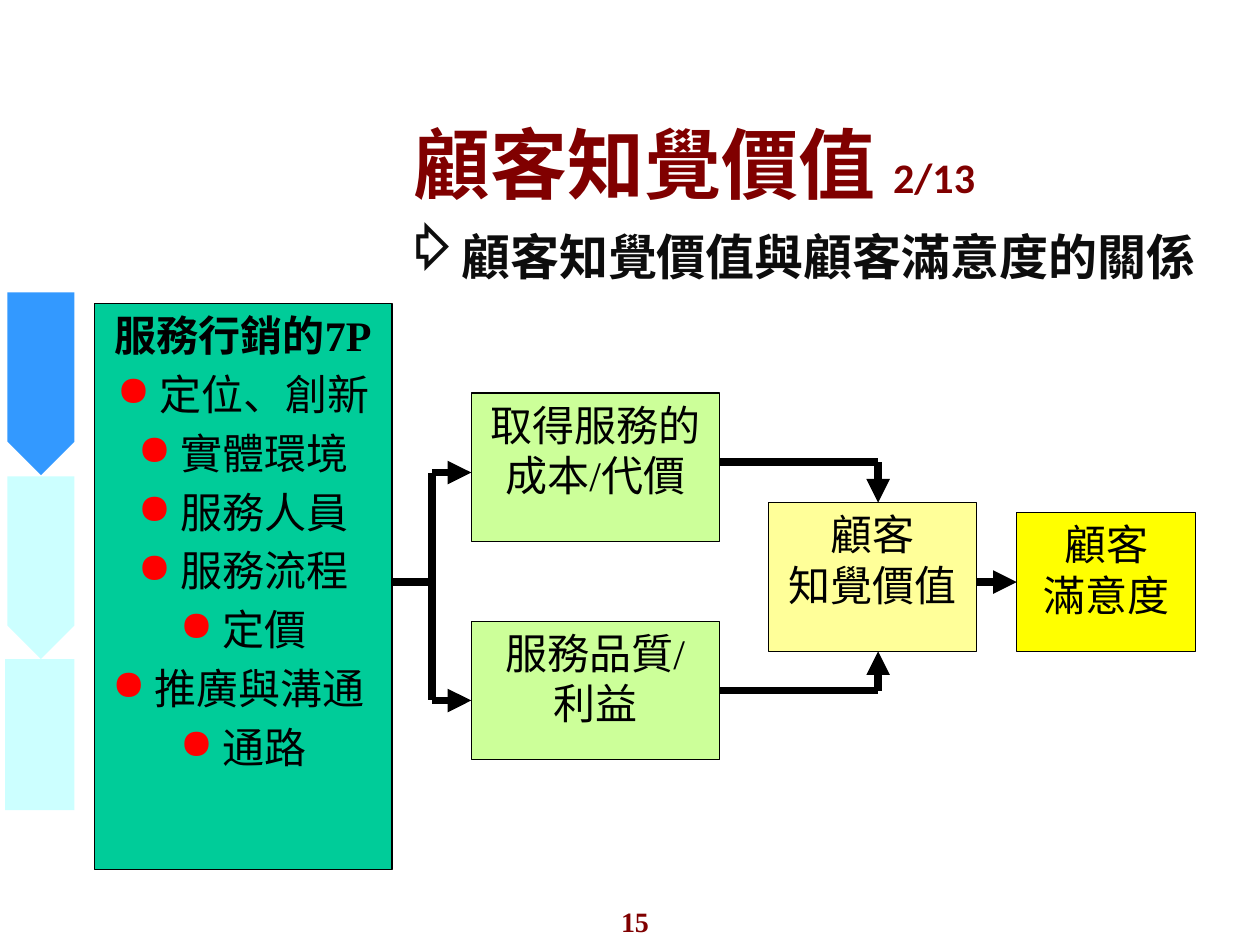
from lxml import etree
from pptx import Presentation
from pptx.dml.color import RGBColor
from pptx.enum.shapes import MSO_CONNECTOR, MSO_SHAPE
from pptx.enum.text import MSO_ANCHOR, PP_ALIGN
from pptx.oxml.ns import qn
from pptx.util import Pt

STRAIGHT = MSO_CONNECTOR.STRAIGHT
RECTANGLE, PENTAGON = MSO_SHAPE.RECTANGLE, MSO_SHAPE.PENTAGON
LEFT, CENTER = PP_ALIGN.LEFT, PP_ALIGN.CENTER
TOP, MIDDLE = MSO_ANCHOR.TOP, MSO_ANCHOR.MIDDLE
LEFT_SIDE, RIGHT_SIDE = 1, 3

BLACK = RGBColor(0, 0, 0)
INK = RGBColor(0x0D, 0x0D, 0x0D)
MAROON = RGBColor(0x80, 0, 0)
RED = RGBColor(0xFF, 0, 0)
GREEN = RGBColor(0, 0xCC, 0x99)
LIME = RGBColor(0xCC, 0xFF, 0x99)
CREAM = RGBColor(0xFF, 0xFF, 0x99)
YELLOW = RGBColor(0xFF, 0xFF, 0)
BLUE = RGBColor(0x33, 0x99, 0xFF)
PALE = RGBColor(0xCC, 0xFF, 0xFF)

SERIF = {"name": "Times New Roman", "size": Pt(24), "bold": False, "color": BLACK}
SERIF_BOLD = {**SERIF, "bold": True}
TITLE = {"name": "Calibri", "size": Pt(44), "bold": True, "color": MAROON}
COUNTER = {**TITLE, "size": Pt(24)}
SUBTITLE = {**TITLE, "size": Pt(28), "color": INK}
NUMBER = {**SERIF_BOLD, "size": Pt(16), "color": MAROON}

# Frames are left, top, width, height in points.
TITLE_FRAME = (133.2, 48.2, 527, 90)
TITLE_SPANS = [("顧客知覺價值 ", TITLE), ("2/13", COUNTER)]
SUBTITLE_FRAME = (223.9, 126, 476, 75.6)
SUBTITLE_TEXT = "顧客知覺價值與顧客滿意度的關係"
NUMBER_FRAME = (347.8, 513.4, 59.8, 26.6)
NUMBER_TEXT = "15"

MIX_FRAME = (54, 173.5, 170, 323.3)
MIX_HEADING = "服務行銷的7P"
MIX_ITEMS = [" 定位、創新", " 實體環境", " 服務人員", " 服務流程",
             " 定價", " 推廣與溝通 ", " 通路"]
BOXES = {
    "cost": ((269.3, 224.6, 141.8, 85), LIME, ["取得服務的", "成本/代價"]),
    "quality": ((269.3, 355, 141.8, 79.2), LIME, ["服務品質/", "利益"]),
    "value": ((439.2, 287.2, 119, 85), CREAM, ["顧客", "知覺價值"]),
    "satisfaction": ((581, 293, 102.2, 79.2), YELLOW, ["顧客", "滿意度"]),
}

FORK_X, JOIN_X = 246.8, 501.8
AXIS_Y, COST_IN_Y, QUALITY_IN_Y = 332.6, 270, 400.3
COST_OUT_Y, QUALITY_OUT_Y = 264.2, 394.6
# Start, end, arrowhead, box joined at its right, box joined at its left
LINES = [
    ((224, AXIS_Y), (FORK_X, AXIS_Y), False, None, None),
    ((FORK_X, COST_IN_Y), (FORK_X, QUALITY_IN_Y), False, None, None),
    ((FORK_X, COST_IN_Y), (269.3, COST_IN_Y), True, None, None),
    ((FORK_X, QUALITY_IN_Y), (269.3, QUALITY_IN_Y), True, None, None),
    ((411.1, COST_OUT_Y), (JOIN_X, COST_OUT_Y), False, None, None),
    ((411.1, QUALITY_OUT_Y), (JOIN_X, QUALITY_OUT_Y), False, "quality", None),
    ((JOIN_X, COST_OUT_Y), (JOIN_X, 287.2), True, None, None),
    ((JOIN_X, QUALITY_OUT_Y), (JOIN_X, 372.2), True, None, None),
    ((558.2, AXIS_Y), (581, AXIS_Y), True, None, "satisfaction"),
]
SIDE_MARKS = [
    (PENTAGON, (-28.8, 200.2, 104.4, 38.2), 90, BLUE),
    (PENTAGON, (-28.8, 305.3, 104.4, 38.2), 90, PALE),
    (RECTANGLE, (2.9, 376.6, 39.6, 86.4), 0, PALE),
]


def points(values):
    return [Pt(value) for value in values]


def style(font, look):
    for name, value in look.items():
        if name == "color":
            font.color.rgb = value
        else:
            setattr(font, name, value)


def add_bullet(para, mark, color, margin, indent):
    props = para._p.get_or_add_pPr()
    props.set("marL", str(Pt(margin)))
    props.set("indent", str(Pt(indent)))
    holder = etree.SubElement(props, qn("a:buClr"))
    etree.SubElement(holder, qn("a:srgbClr"), val=str(color))
    etree.SubElement(props, qn("a:buChar"), char=mark)


def write(shape, paragraphs, align=CENTER, anchor=TOP):
    """Fill a shape with paragraphs, each a list of (text, look) spans."""
    frame = shape.text_frame
    frame.word_wrap = True
    frame.vertical_anchor = anchor
    for index, spans in enumerate(paragraphs):
        para = frame.paragraphs[0] if index == 0 else frame.add_paragraph()
        para.alignment = align
        for text, look in spans:
            span = para.add_run()
            span.text = text
            style(span.font, look)
    return frame.paragraphs


def add_block(page, kind, frame, fill, outlined=True):
    shape = page.shapes.add_shape(kind, *points(frame))
    shape.shadow.inherit = False
    shape.fill.solid()
    shape.fill.fore_color.rgb = fill
    if outlined:
        shape.line.color.rgb = BLACK
        shape.line.width = Pt(0.75)
    else:
        shape.line.fill.background()
    return shape


def add_line(page, start, end, arrow):
    line = page.shapes.add_connector(STRAIGHT, *points(start + end))
    line.line.color.rgb = BLACK
    line.line.width = Pt(4.5)
    if arrow:
        etree.SubElement(line.line._get_or_add_ln(), qn("a:tailEnd"), type="triangle")
    etree.SubElement(line._element.spPr, qn("a:effectLst"))
    return line


def main():
    deck = Presentation()
    deck.slide_width, deck.slide_height = Pt(720), Pt(540)
    page = deck.slides.add_slide(deck.slide_layouts[5])

    title = page.shapes.title
    title.left, title.top, title.width, title.height = points(TITLE_FRAME)
    write(title, [TITLE_SPANS], anchor=MIDDLE)

    subtitle = page.shapes.add_textbox(*points(SUBTITLE_FRAME))
    add_bullet(subtitle.text_frame.paragraphs[0], "⇨", INK, 27, -27)
    write(subtitle, [[(SUBTITLE_TEXT, SUBTITLE)]], LEFT)
    number = page.shapes.add_textbox(*points(NUMBER_FRAME))
    write(number, [[(NUMBER_TEXT, NUMBER)]], LEFT)

    mix = add_block(page, RECTANGLE, MIX_FRAME, GREEN)
    items = [[(item, SERIF)] for item in MIX_ITEMS]
    for para in write(mix, [[(MIX_HEADING, SERIF_BOLD)]] + items)[1:]:
        para.space_before = Pt(4.8)
        add_bullet(para, "●", RED, 0, -4.5)

    boxes = {}
    for name, (frame, fill, rows) in BOXES.items():
        boxes[name] = add_block(page, RECTANGLE, frame, fill)
        write(boxes[name], [[(row, SERIF)] for row in rows])

    for start, end, arrow, source, target in LINES:
        line = add_line(page, start, end, arrow)
        if source:
            line.begin_connect(boxes[source], RIGHT_SIDE)
        if target:
            line.end_connect(boxes[target], LEFT_SIDE)

    for kind, frame, angle, fill in SIDE_MARKS:
        add_block(page, kind, frame, fill, outlined=False).rotation = angle

    deck.save("out.pptx")


if __name__ == "__main__":
    main()
